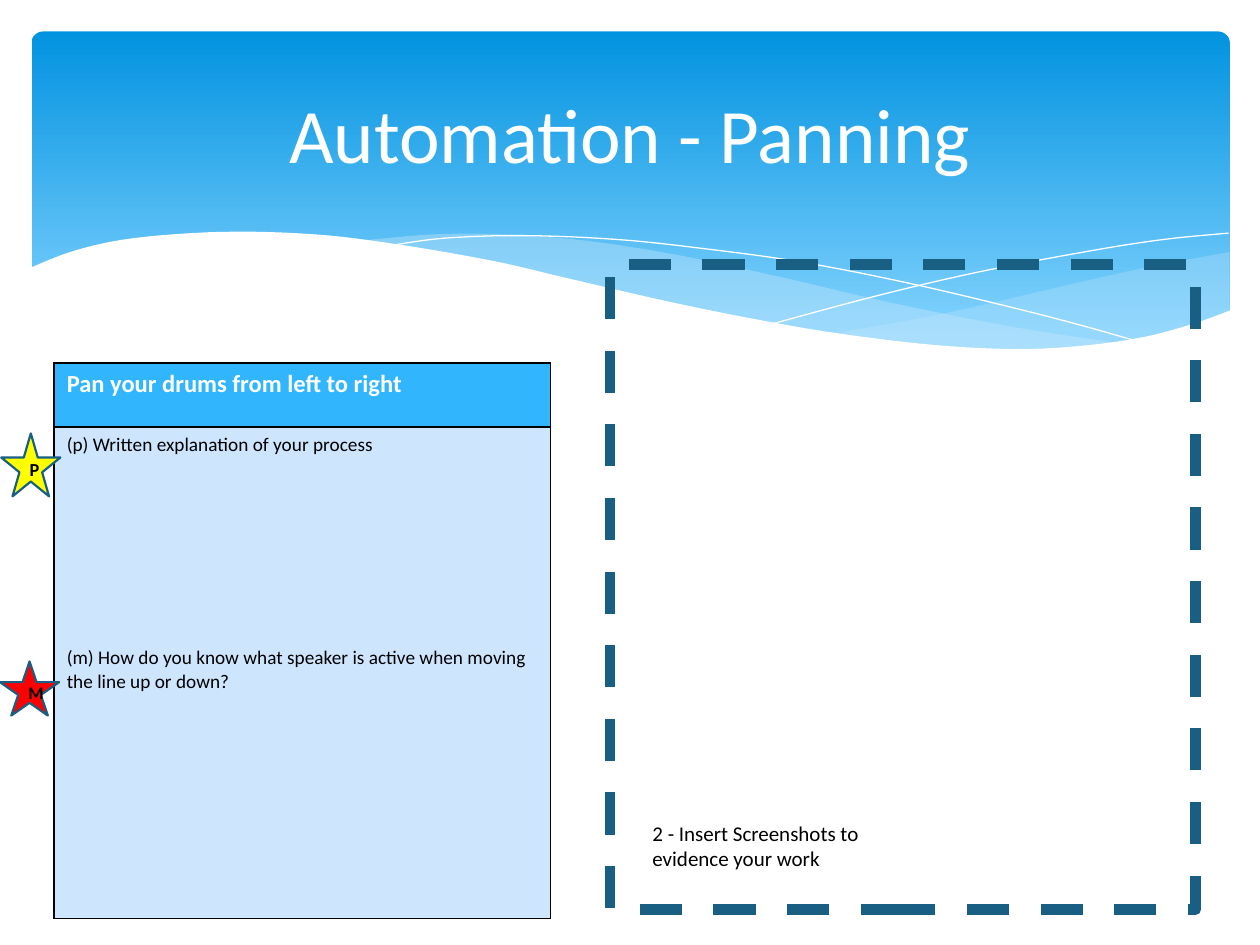
from lxml import etree
from pptx import Presentation
from pptx import util as u
from pptx.dml.color import RGBColor
from pptx.enum import dml, shapes, text
from pptx.oxml import ns

WHITE, BLACK, NAVY, PALE = "FFFFFF", "000000", "195F84", "C6E7FC"
COLUMNS, ROWS = 100, 75

LIGHT_WAVE = [
    [(66.1, 26.5), (75.3, 24.8), (86.1, 22.3), (92.1, 21), (97.6, 20)],
    [(97.6, 24.7), (93.5, 26.2), (88.9, 27.2), (80.3, 27.8), (73.2, 27.4), (66.1, 26.5)],
]
MIDDLE_WAVE = [
    [(28.6, 19.1), (34.4, 18.6), (39.9, 18.6), (46.5, 19.1), (54.1, 20.3),
     (62.9, 22.2), (70.6, 24), (80.7, 26), (89.3, 27.3)],
    [(84.8, 27.7), (79.6, 27.8), (72.2, 27.4), (65, 26.4), (56.6, 24.8),
     (49.1, 23.2), (44.9, 22.2), (38.3, 20.7), (28.6, 19.1)],
]
FALLING_LINE = [[(30.9, 19.5), (35.3, 18.9), (41.6, 18.7), (48.9, 19), (55.6, 19.7),
                 (63.6, 20.8), (72.7, 22.6), (83.1, 25.1), (90.7, 27.2)]]
RISING_LINE = [[(61.3, 25.7), (69.5, 23.5), (77.6, 21.6), (86.6, 19.9), (92.4, 19), (97.5, 18.5)]]
WHITE_WAVE = [
    [(2.3, 21.3), (5.9, 19.9), (10.6, 18.9), (17.7, 18.4), (25, 18.6), (31.6, 19.4),
     (39.1, 20.7), (44.7, 22), (52.9, 23.9), (60.3, 25.4), (66.8, 26.5), (74.4, 27.4),
     (80.9, 27.7), (86.3, 27.4), (91, 26.7), (95, 25.6), (97.7, 24.6)],
    [(97.7, 32.9)],
    [(2.3, 32.9)],
]


def color(value):
    return RGBColor.from_string(value)


def smooth(points, steps=6):
    padded = [points[0], *points, points[-1]]
    curve = [points[0]]
    for a, b, c, d in zip(padded, padded[1:], padded[2:], padded[3:]):
        for step in range(1, steps + 1):
            t = step / steps
            curve.append(tuple(
                (2 * q + (r - p) * t + (2 * p - 5 * q + 4 * r - s) * t ** 2
                 + (3 * q - p - 3 * r + s) * t ** 3) / 2
                for p, q, r, s in zip(a, b, c, d)))
    return curve


def write(frame, *lines, size=12, ink=BLACK, bold=False, align=None, gap=0):
    frame.word_wrap = True
    for index, line in enumerate(lines):
        paragraph = frame.add_paragraph() if index else frame.paragraphs[0]
        paragraph.alignment = align
        if index:
            paragraph.space_before = u.Pt(gap)
        run = paragraph.add_run()
        run.text = line
        run.font.name = "Calibri"
        run.font.size = u.Pt(size)
        run.font.bold = bold
        run.font.color.rgb = color(ink)


class Deck:
    def __init__(self):
        self.presentation = Presentation()
        self.presentation.slide_width = u.Inches(10)
        self.presentation.slide_height = u.Inches(7.5)
        self.slide = self.presentation.slides.add_slide(self.presentation.slide_layouts[6])

    def x(self, columns):
        return round(self.presentation.slide_width * columns / COLUMNS)

    def y(self, rows):
        return round(self.presentation.slide_height * rows / ROWS)

    def box(self, left, top, width, height):
        return self.x(left), self.y(top), self.x(width), self.y(height)

    def paint(self, shape, fill=None, line=None, width=1.0, alpha=None):
        shape.shadow.inherit = False
        if fill:
            shape.fill.solid()
            shape.fill.fore_color.rgb = color(fill)
            if alpha:
                tint = shape.fill._xPr.find(".//" + ns.qn("a:srgbClr"))
                etree.SubElement(tint, ns.qn("a:alpha"), val=str(alpha * 1000))
        else:
            shape.fill.background()
        if line:
            shape.line.color.rgb = color(line)
            shape.line.width = u.Pt(width)
        else:
            shape.line.fill.background()
        return shape

    def shape(self, kind, at, **look):
        return self.paint(self.slide.shapes.add_shape(kind, *self.box(*at)), **look)

    def banner(self, at, top, bottom):
        shape = self.shape(shapes.MSO_SHAPE.ROUNDED_RECTANGLE, at)
        shape.adjustments[0] = 0.034
        shape.fill.gradient()
        shape.fill.gradient_angle = 270
        for stop, value, position in zip(shape.fill.gradient_stops, (top, bottom), (0, 0.9)):
            stop.color.rgb = color(value)
            stop.position = position

    def curve(self, parts, **look):
        points = [(self.x(a), self.y(b)) for part in parts for a, b in smooth(part)]
        builder = self.slide.shapes.build_freeform(*points[0], scale=1.0)
        builder.add_line_segments(points[1:], close="fill" in look)
        self.paint(builder.convert_to_shape(), **look)

    def text(self, at, words, anchor=text.MSO_ANCHOR.TOP, **style):
        frame = self.slide.shapes.add_textbox(*self.box(*at)).text_frame
        frame.vertical_anchor = anchor
        write(frame, words, **style)

    def star(self, at, letter, fill, size):
        shape = self.shape(shapes.MSO_SHAPE.STAR_5_POINT, at, fill=fill, line=NAVY, width=1.25)
        shape.text_frame.vertical_anchor = text.MSO_ANCHOR.MIDDLE
        write(shape.text_frame, letter, size=size, bold=True, align=text.PP_ALIGN.CENTER)

    def table(self, at, heights, rows):
        table = self.slide.shapes.add_table(len(rows), 1, *self.box(*at)).table
        for row, height, (fill, lines, style) in zip(table.rows, heights, rows):
            row.height = self.y(height)
            cell = row.cells[0]
            cell.fill.solid()
            cell.fill.fore_color.rgb = color(fill)
            write(cell.text_frame, *lines, **style)
            self.border(cell)

    def border(self, cell):
        properties = cell._tc.get_or_add_tcPr()
        for index, side in enumerate("LRTB"):
            line = etree.Element(ns.qn("a:ln" + side), w=str(u.Pt(1)))
            solid = etree.SubElement(line, ns.qn("a:solidFill"))
            etree.SubElement(solid, ns.qn("a:srgbClr"), val=BLACK)
            properties.insert(index, line)


def main():
    deck = Deck()
    deck.banner((2.5, 2.5, 95.1, 27), "0293E0", "83D3FE")
    deck.curve(LIGHT_WAVE, fill=PALE, alpha=29)
    deck.curve(MIDDLE_WAVE, fill=PALE, alpha=40)
    for line in (FALLING_LINE, RISING_LINE):
        deck.curve(line, line=WHITE, width=0)
    deck.curve(WHITE_WAVE, fill=WHITE)
    deck.text((5, 3.7, 90, 13.7), "Automation - Panning", anchor=text.MSO_ANCHOR.MIDDLE,
              size=44, ink=WHITE, align=text.PP_ALIGN.CENTER)
    deck.table((4.3, 28.8, 39.4, 44.1), (5.1, 39), [
        ("31B6FD", ["Pan your drums from left to right"], dict(size=14, ink=WHITE, bold=True)),
        ("CEE5FE", ["(p) Written explanation of your process",
                    "(m) How do you know what speaker is active when moving the line up or down?"],
         dict(size=11, gap=108)),
    ])
    frame = deck.shape(shapes.MSO_SHAPE.RECTANGLE, (48.4, 21, 46.5, 51.2), line=NAVY, width=6)
    frame.line.dash_style = dml.MSO_LINE.DASH
    deck.text((50.8, 64.6, 23.6, 5), "2 - Insert Screenshots to evidence your work")
    deck.star((0, 52.5, 4.7, 4.3), "M", "FF0000", 10)
    deck.star((0.1, 34.4, 4.7, 5), "P", "FFFF00", 10.5)
    deck.presentation.save("out.pptx")


if __name__ == "__main__":
    main()
